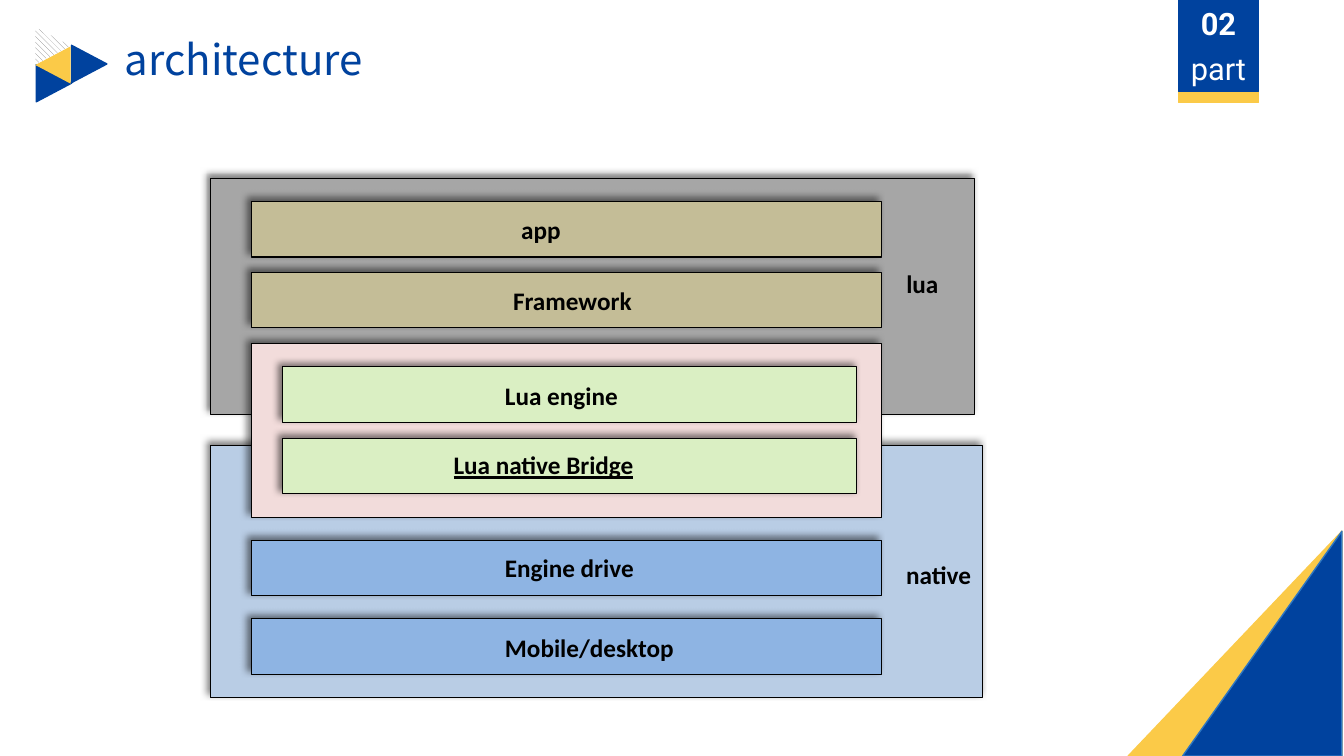
from dataclasses import dataclass
from typing import Any, Optional

from lxml import etree
from pptx import Presentation
from pptx.dml.color import RGBColor
from pptx.enum.dml import MSO_PATTERN
from pptx.enum.shapes import MSO_SHAPE
from pptx.enum.text import MSO_ANCHOR, PP_ALIGN
from pptx.oxml import parse_xml
from pptx.oxml.ns import nsdecls, qn
from pptx.util import Inches, Pt

RECT = MSO_SHAPE.RECTANGLE
TRIANGLE = MSO_SHAPE.ISOSCELES_TRIANGLE
CORNER = MSO_SHAPE.RIGHT_TRIANGLE
HATCH = MSO_PATTERN.WIDE_DOWNWARD_DIAGONAL
CENTER, LEFT = PP_ALIGN.CENTER, PP_ALIGN.LEFT
MIDDLE, TOP = MSO_ANCHOR.MIDDLE, MSO_ANCHOR.TOP


@dataclass(frozen=True)
class Theme:
    """Colours, fonts and type sizes of the slide."""
    blue: str = "00429E"
    edge: str = "2D76C2"
    yellow: str = "FBCA48"
    white: str = "FFFFFF"
    black: str = "000000"
    hatch: str = "808080"
    lua: str = "A6A6A6"
    lua_layer: str = "C4BD97"
    native: str = "B9CDE5"
    native_layer: str = "8EB4E3"
    bridge: str = "F2DCDB"
    bridge_layer: str = "DAEFC3"
    title_font: str = "Noto Sans CJK SC"
    badge_font: str = "Roboto"
    label_font: str = "Calibri"
    title_size: int = 30
    badge_size: int = 22
    label_size: int = 18


THEME = Theme()
TITLE = {"name": THEME.title_font, "size": Pt(THEME.title_size)}
BADGE = {"name": THEME.badge_font, "size": Pt(THEME.badge_size)}
LABEL = {"name": THEME.label_font, "size": Pt(THEME.label_size), "bold": True}


@dataclass(frozen=True)
class Block:
    """A filled preset shape."""
    left: float
    top: float
    width: float
    height: float
    fill: str
    line: Optional[str] = None
    weight: float = 1
    kind: Any = RECT
    rotation: int = 0
    flip: bool = False
    shadow: bool = False
    hatched: bool = False


@dataclass(frozen=True)
class Label:
    """A line of text at a fixed place."""
    text: str
    left: float
    top: float
    width: float
    height: float = 0.4
    color: str = THEME.black


def panel(left: float, top: float, width: float, height: float, fill: str) -> Block:
    """Describe an outlined architecture box with a shadow."""
    return Block(left, top, width, height, fill, THEME.black, 0.75, shadow=True)


def layer(top: float, fill: str) -> Block:
    """Describe a full-width layer bar."""
    return panel(2.49, top, 6.25, 0.55, fill)


def bridge_layer(top: float) -> Block:
    """Describe a bar inside the bridge box."""
    return panel(2.8, top, 5.7, 0.55, THEME.bridge_layer)


def arrow(left: float, top: float, fill: str, **look: Any) -> Block:
    """Describe one triangle of the title mark."""
    return Block(left, top, 0.37, 0.35, fill, kind=TRIANGLE, **look)


def badge(top: float) -> Block:
    """Describe one half of the part badge."""
    return Block(11.69, top, 0.79, 0.47, THEME.blue, THEME.blue, 0.75)


def corner(left: float, width: float, fill: str, line: str) -> Block:
    """Describe a triangle in the bottom right corner."""
    return Block(left, 5.27, width, 2.23, fill, line, kind=CORNER, flip=True)


BLOCKS = [
    arrow(0.35, 0.65, THEME.blue, line=THEME.blue, rotation=90),
    arrow(0.7, 0.46, THEME.blue, line=THEME.blue, rotation=90),
    arrow(0.34, 0.47, THEME.yellow, rotation=270),
    arrow(0.34, 0.28, THEME.hatch, rotation=90, hatched=True),
    Block(11.69, 0.86, 0.79, 0.16, THEME.yellow, THEME.yellow),
    badge(0.44),
    badge(0),
    corner(11.19, 2.12, THEME.yellow, THEME.yellow),
    corner(11.73, 1.58, THEME.blue, THEME.edge),
    panel(2.09, 4.42, 7.66, 2.5, THEME.native),
    layer(5.36, THEME.native_layer),
    layer(6.14, THEME.native_layer),
    panel(2.09, 1.77, 7.58, 2.34, THEME.lua),
    layer(2.7, THEME.lua_layer),
    layer(2, THEME.lua_layer),
    panel(2.49, 3.41, 6.25, 1.72, THEME.bridge),
    bridge_layer(3.64),
    bridge_layer(4.35),
]

LABELS = [
    Label("lua", 8.89, 2.61, 0.62),
    Label("native", 8.89, 5.5, 0.86),
    Label("Mobile/desktop", 4.91, 6.22, 2.12),
    Label("Engine drive", 4.91, 5.43, 1.72),
    Label("Lua engine", 4.91, 3.72, 1.41),
    Label("Framework", 4.99, 2.78, 1.56),
    Label("app", 5.07, 2.08, 1.4),
]


def add_shadow(sp: Any) -> None:
    """Give a shape a soft shadow towards the top left."""
    effects = sp.element.spPr.find(qn("a:effectLst"))
    shadow = parse_xml(f'<a:outerShdw {nsdecls("a")} blurRad="{Pt(5)}" dist="{Pt(4.2)}" '
                       'dir="13500000" algn="br" rotWithShape="0"/>')
    color = etree.SubElement(shadow, qn("a:srgbClr"), val=THEME.black)
    etree.SubElement(color, qn("a:alpha"), val="50000")
    effects.append(shadow)


def draw_block(s: Any, block: Block) -> None:
    """Draw one filled shape."""
    box = map(Inches, (block.left, block.top, block.width, block.height))
    sp = s.shapes.add_shape(block.kind, *box)
    sp.rotation = block.rotation
    sp.shadow.inherit = False
    if block.hatched:
        sp.fill.patterned()
        sp.fill.pattern = HATCH
        sp.fill.fore_color.rgb = RGBColor.from_string(block.fill)
        sp.fill.back_color.rgb = RGBColor.from_string(THEME.white)
    else:
        sp.fill.solid()
        sp.fill.fore_color.rgb = RGBColor.from_string(block.fill)
    if block.line:
        sp.line.color.rgb = RGBColor.from_string(block.line)
        sp.line.width = Pt(block.weight)
    else:
        sp.line.fill.background()
    if block.flip:
        sp.element.spPr.xfrm.set("flipH", "1")
    if block.shadow:
        add_shadow(sp)


def draw_label(s: Any, label: Label, font: dict[str, Any],
               align: Any = LEFT, anchor: Any = TOP) -> None:
    """Draw one line of text."""
    box = map(Inches, (label.left, label.top, label.width, label.height))
    tf = s.shapes.add_textbox(*box).text_frame
    tf.word_wrap = True
    tf.vertical_anchor = anchor
    p = tf.paragraphs[0]
    p.alignment = align
    r = p.add_run()
    r.text = label.text
    for name, value in font.items():
        setattr(r.font, name, value)
    r.font.color.rgb = RGBColor.from_string(label.color)


def main() -> None:
    """Build and save the slide."""
    prs = Presentation()
    prs.slide_width, prs.slide_height = Inches(13.33), Inches(7.5)
    s = prs.slides.add_slide(prs.slide_layouts[6])
    for block in BLOCKS:
        draw_block(s, block)
    draw_label(s, Label("architecture", 1.14, 0.28, 7.7, 0.61, THEME.blue), TITLE)
    for text, top, bold in (("part", 0.44, False), ("02", 0, True)):
        draw_label(s, Label(text, 11.69, top, 0.79, 0.47, THEME.white),
                   BADGE | {"bold": bold}, CENTER, MIDDLE)
    for label in LABELS:
        draw_label(s, label, LABEL)
    draw_label(s, Label("Lua native Bridge", 4.4, 4.41, 2.5), LABEL | {"underline": True})
    prs.save("out.pptx")


if __name__ == "__main__":
    main()
